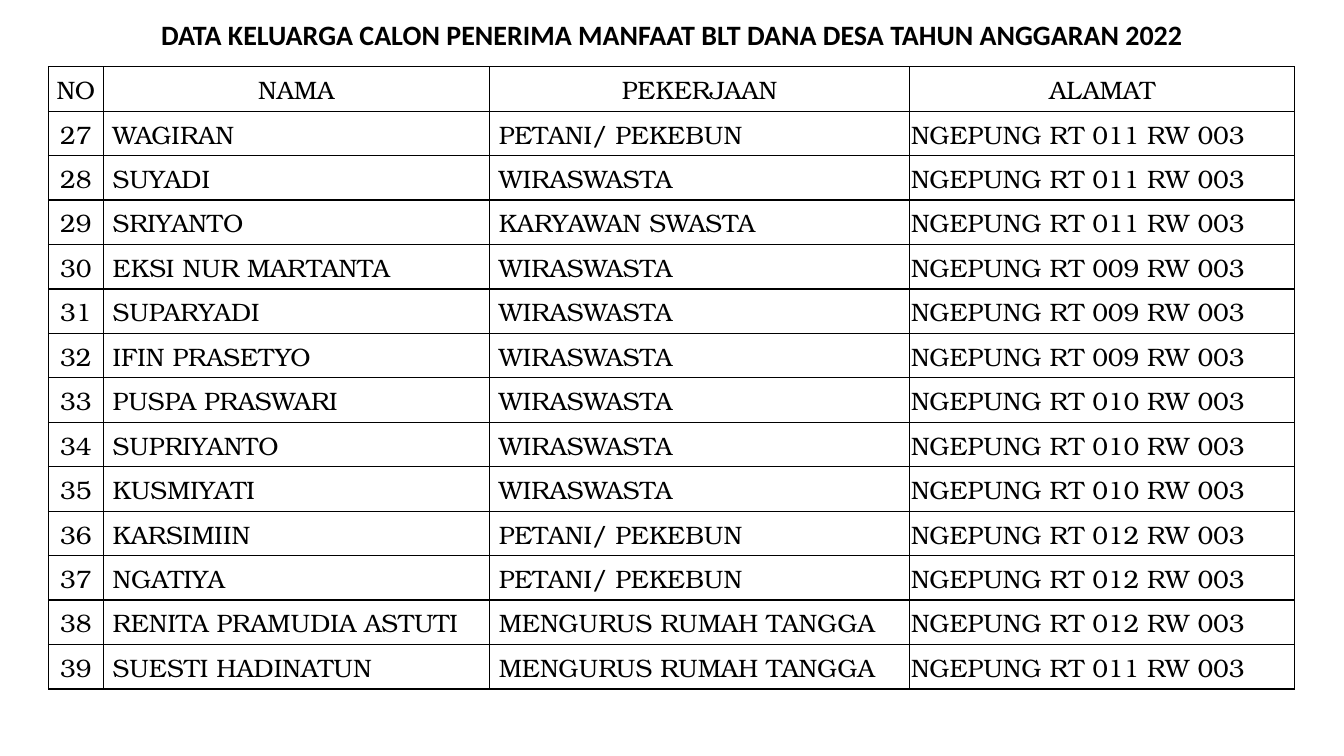
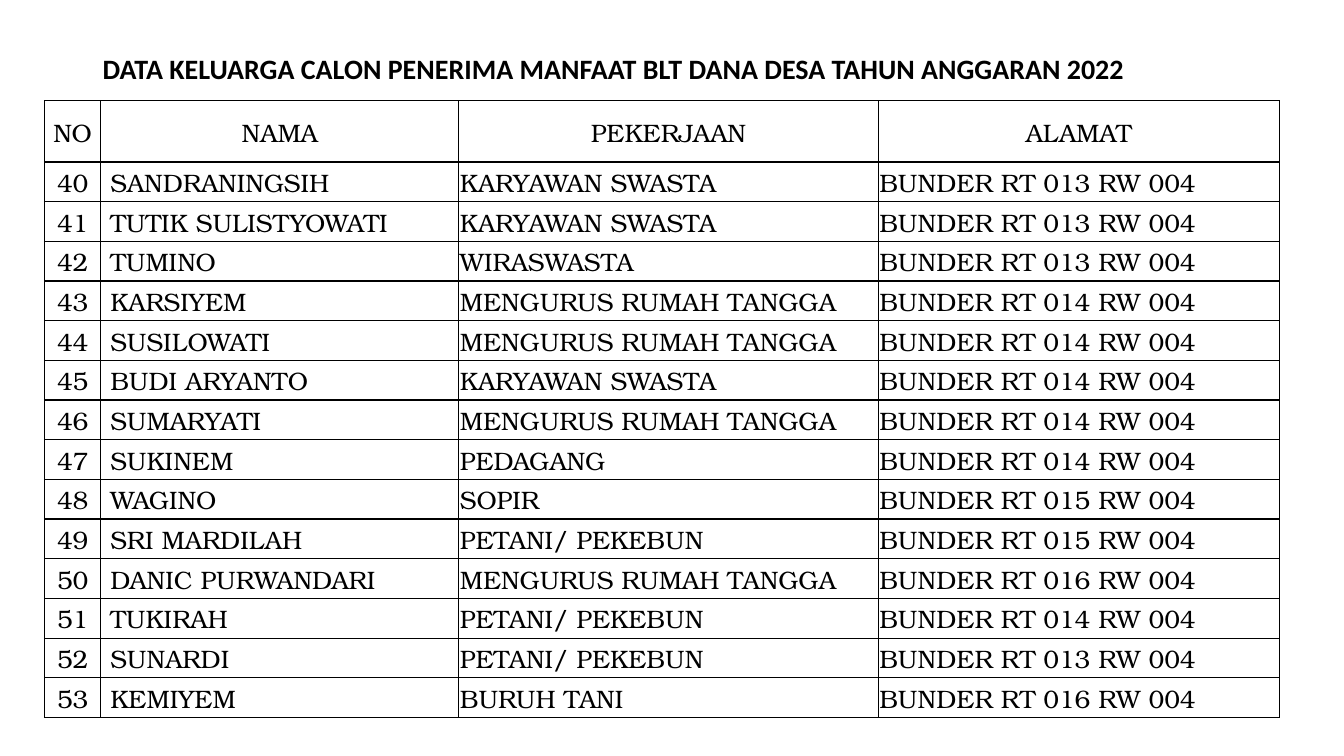
from lxml.etree import SubElement
from pptx import Presentation
from pptx.dml.color import RGBColor
from pptx.enum.text import MSO_ANCHOR, MSO_AUTO_SIZE, PP_ALIGN
from pptx.oxml.ns import qn
from pptx.util import Cm, Pt

# Wording shared by both slides
TITLE = "DATA KELUARGA CALON PENERIMA MANFAAT BLT DANA DESA TAHUN ANGGARAN 2022"
HEADERS = ("NO", "NAMA", "PEKERJAAN", "ALAMAT")

# Occupations
FARMER = "PETANI/ PEKEBUN"
SELF_EMPLOYED = "WIRASWASTA"
EMPLOYEE = "KARYAWAN SWASTA"
HOMEMAKER = "MENGURUS RUMAH TANGGA"

# Recipients: name, occupation, RT
NGEPUNG = (
    ("WAGIRAN", FARMER, 11),
    ("SUYADI", SELF_EMPLOYED, 11),
    ("SRIYANTO", EMPLOYEE, 11),
    ("EKSI NUR MARTANTA", SELF_EMPLOYED, 9),
    ("SUPARYADI", SELF_EMPLOYED, 9),
    ("IFIN PRASETYO", SELF_EMPLOYED, 9),
    ("PUSPA PRASWARI", SELF_EMPLOYED, 10),
    ("SUPRIYANTO", SELF_EMPLOYED, 10),
    ("KUSMIYATI", SELF_EMPLOYED, 10),
    ("KARSIMIIN", FARMER, 12),
    ("NGATIYA", FARMER, 12),
    ("RENITA PRAMUDIA ASTUTI", HOMEMAKER, 12),
    ("SUESTI HADINATUN", HOMEMAKER, 11),
)
BUNDER = (
    ("SANDRANINGSIH", EMPLOYEE, 13),
    ("TUTIK SULISTYOWATI", EMPLOYEE, 13),
    ("TUMINO", SELF_EMPLOYED, 13),
    ("KARSIYEM", HOMEMAKER, 14),
    ("SUSILOWATI", HOMEMAKER, 14),
    ("BUDI ARYANTO", EMPLOYEE, 14),
    ("SUMARYATI", HOMEMAKER, 14),
    ("SUKINEM", "PEDAGANG", 14),
    ("WAGINO", "SOPIR", 15),
    ("SRI MARDILAH", FARMER, 15),
    ("DANIC PURWANDARI", HOMEMAKER, 16),
    ("TUKIRAH", FARMER, 14),
    ("SUNARDI", FARMER, 13),
    ("KEMIYEM", "BURUH TANI", 16),
)


def recipient_rows(recipients, first_number, hamlet, rw):
    """Number the recipients and write out their addresses."""
    return [
        (str(number), name, occupation, f"{hamlet} RT {rt:03} RW {rw:03}")
        for number, (name, occupation, rt) in enumerate(recipients, first_number)
    ]


class Deck:
    BLACK = RGBColor(0x00, 0x00, 0x00)
    TITLE_FONT, TITLE_SIZE = "Calibri", Pt(20)
    TABLE_FONT, TABLE_SIZE = "TeX Gyre Bonum", Pt(18)
    BORDER = Pt(1)
    MARGIN, INDENT = Cm(0.03), Cm(0.24)

    def __init__(self):
        self.presentation = Presentation()
        self.presentation.slide_width = Cm(33.87)
        self.presentation.slide_height = Cm(19.05)
        self.slide = None

    def add_slide(self):
        title_only = self.presentation.slide_layouts[5]
        self.slide = self.presentation.slides.add_slide(title_only)

    def add_run(self, paragraph, text, font, size, bold=False):
        run = paragraph.add_run()
        run.text = text
        run.font.name, run.font.size, run.font.bold = font, size, bold
        run.font.color.rgb = self.BLACK

    def add_title(self, top, alignment):
        title = self.slide.shapes.title
        title.left, title.top = Cm(2.33), Cm(top)
        title.width, title.height = Cm(29.21), Cm(1.52)
        frame = title.text_frame
        frame.auto_size = MSO_AUTO_SIZE.NONE
        frame.vertical_anchor = MSO_ANCHOR.MIDDLE
        paragraph = frame.paragraphs[0]
        paragraph.alignment = alignment
        paragraph.line_spacing = 0.9
        self.add_run(paragraph, TITLE, self.TITLE_FONT, self.TITLE_SIZE, True)

    def add_borders(self, cell):
        properties = cell._tc.get_or_add_tcPr()
        for side in ("a:lnL", "a:lnR", "a:lnT", "a:lnB"):
            line = SubElement(properties, qn(side), w=str(self.BORDER))
            fill = SubElement(line, qn("a:solidFill"))
            SubElement(fill, qn("a:srgbClr"), val=str(self.BLACK))

    def fill_cell(self, cell, text, centred, indented):
        self.add_borders(cell)
        cell.fill.background()
        cell.vertical_anchor = MSO_ANCHOR.MIDDLE
        cell.margin_left = self.INDENT if indented else self.MARGIN
        cell.margin_right = cell.margin_top = self.MARGIN
        cell.margin_bottom = 0
        paragraph = cell.text_frame.paragraphs[0]
        paragraph.alignment = PP_ALIGN.CENTER if centred else PP_ALIGN.LEFT
        self.add_run(paragraph, text, self.TABLE_FONT, self.TABLE_SIZE)

    def add_table(self, left, top, widths, header_height, row_height, rows, indented):
        """Draw the list; indented holds the columns set in from the border."""
        rows = [HEADERS, *rows]
        heights = [header_height] + [row_height] * (len(rows) - 1)
        table = self.slide.shapes.add_table(
            len(rows), len(widths), Cm(left), Cm(top), Cm(sum(widths)), Cm(sum(heights))
        ).table
        table.first_row = table.horz_banding = False
        for column, width in zip(table.columns, widths):
            column.width = Cm(width)
        for row_index, (values, height) in enumerate(zip(rows, heights)):
            table.rows[row_index].height = Cm(height)
            for column_index, text in enumerate(values):
                centred = row_index == 0 or column_index == 0
                self.fill_cell(
                    table.cell(row_index, column_index),
                    text,
                    centred,
                    not centred and column_index in indented,
                )


def main():
    deck = Deck()

    # Ngepung recipients
    deck.add_slide()
    deck.add_title(0.15, PP_ALIGN.CENTER)
    deck.add_table(
        1.22, 1.68, (1.38, 9.73, 10.6, 9.7), 1.12, 1.12,
        recipient_rows(NGEPUNG, 27, "NGEPUNG", 3), indented=(1, 2),
    )

    # Bunder recipients
    deck.add_slide()
    deck.add_title(1.02, PP_ALIGN.LEFT)
    deck.add_table(
        1.12, 2.54, (1.42, 9.02, 10.57, 10.11), 1.54, 1,
        recipient_rows(BUNDER, 40, "BUNDER", 4), indented=(1,),
    )

    deck.presentation.save("out.pptx")


if __name__ == "__main__":
    main()
